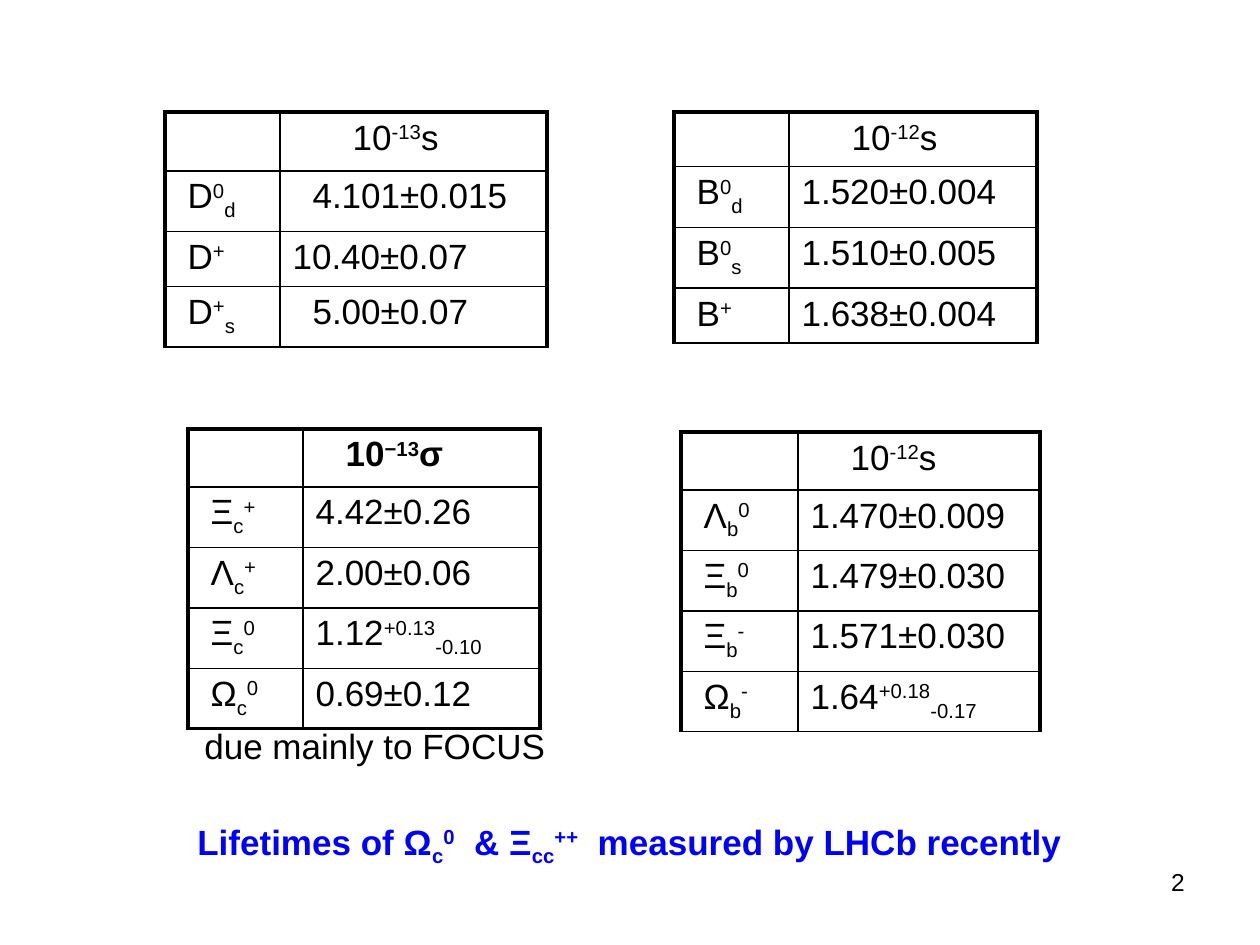
from lxml.etree import SubElement
from pptx import Presentation
from pptx.dml.color import RGBColor
from pptx.enum.text import MSO_ANCHOR, PP_ALIGN
from pptx.oxml.ns import qn
from pptx.util import Emu, Pt

COLORS = {"ink": "000000", "accent": "0000FF"}
FONT = "Arial"
SPACE = 10  # width of one indent step in px
THICK, THIN = 2.25, 1
BASELINES = {"^": "30000", "_": "-25000"}

# Each row: particle, indent steps of its value, value.
# Runs are split by "|"; "^" starts a superscript and "_" a subscript.
CHARMED_MESONS = [
    ("", 6, "10|^-13|s"),
    ("D|^0|_d", 2, "4.101±0.015"),
    ("D|^+", 0, "10.40±0.07"),
    ("D|^+|_s", 2, "5.00±0.07"),
]
BEAUTY_MESONS = [
    ("", 5, "10|^-12|s"),
    ("B|^0|_d", 0, "1.520±0.004"),
    ("B|^0|_s", 0, "1.510±0.005"),
    ("B|^+", 0, "1.638±0.004"),
]
CHARMED_BARYONS = [
    ("", 3, "10|^−13|σ"),
    ("Ξ|_c|^+", 0, "4.42±0.26"),
    ("Λ|_c|^+", 0, "2.00±0.06"),
    ("Ξ|_c|^0", 0, "1.12|^+0.13|_-0.10"),
    ("Ω|_c|^0", 0, "0.69±0.12"),
]
BEAUTY_BARYONS = [
    ("", 4, "10|^-12|s"),
    ("Λ|_b|^0", 0, "1.470±0.009"),
    ("Ξ|_b|^0", 0, "1.479±0.030"),
    ("Ξ|_b|^-", 0, "1.571±0.030"),
    ("Ω|_b|^-", 0, "1.64|^+0.18|_-0.17"),
]


def px(length):
    return Emu(round(length * 914400 / 126))


def add_runs(paragraph, markup, size=20, color="ink", bold=False):
    for part in markup.split("|"):
        baseline = BASELINES.get(part[:1])
        run = paragraph.add_run()
        run.text = part[1:] if baseline else part
        font = run.font
        font.name, font.size, font.bold = FONT, Pt(size), bold
        font.color.rgb = RGBColor.from_string(COLORS[color])
        if baseline:
            font._element.set("baseline", baseline)


def set_borders(cell, **widths):
    properties = cell._tc.get_or_add_tcPr()
    for side, width in widths.items():
        line = SubElement(properties, qn(f"a:ln{side}"), w=str(Pt(width)))
        fill = SubElement(line, qn("a:solidFill"))
        SubElement(fill, qn("a:srgbClr"), val=COLORS["ink"])


def fill_cell(cell, markup, indent, bold):
    cell.margin_left = cell.margin_right = Pt(7.2)
    cell.margin_top = cell.margin_bottom = Pt(3.6)
    cell.vertical_anchor = MSO_ANCHOR.TOP
    cell.fill.background()
    if markup:
        paragraph = cell.text_frame.paragraphs[0]
        paragraph.space_before = Pt(0.8)
        if indent:
            paragraph._p.get_or_add_pPr().set("marL", str(px(indent * SPACE)))
        add_runs(paragraph, markup, bold=bold)


def add_lifetimes(slide, left, top, widths, heights, rows, bottom=THIN, bold_unit=False):
    table = slide.shapes.add_table(
        len(rows), 2, px(left), px(top), px(sum(widths)), px(sum(heights))
    ).table
    table.first_row = table.horz_banding = False
    for column, width in zip(table.columns, widths):
        column.width = px(width)
    last = len(rows) - 1
    for i, (particle, indent, value) in enumerate(rows):
        table.rows[i].height = px(heights[i])
        for j, (markup, steps) in enumerate([(particle, 1), (value, indent)]):
            cell = table.cell(i, j)
            set_borders(
                cell,
                L=THIN if j else THICK,
                R=THICK if j else THIN,
                T=THIN if i else THICK,
                B=bottom if i == last else THIN,
            )
            fill_cell(cell, markup, steps, bold_unit and i == 0)


def add_text(slide, left, top, width, height, markup, align=PP_ALIGN.LEFT, before=0, **style):
    frame = slide.shapes.add_textbox(px(left), px(top), px(width), px(height)).text_frame
    frame.word_wrap = True
    paragraph = frame.paragraphs[0]
    paragraph.alignment = align
    paragraph.space_before = Pt(before)
    add_runs(paragraph, markup, **style)


def main():
    deck = Presentation()
    deck.slide_width, deck.slide_height = px(1260), px(945)
    slide = deck.slides.add_slide(deck.slide_layouts[6])

    # Page number
    add_text(slide, 903, 861, 294, 66, "2", align=PP_ALIGN.RIGHT, size=14)

    # Baryon lifetimes
    add_lifetimes(slide, 188, 429, (115, 237), (58, 60, 60, 60, 60), CHARMED_BARYONS,
                  bottom=THICK, bold_unit=True)
    add_lifetimes(slide, 681, 432, (117, 242), (58, 60, 60, 60, 60), BEAUTY_BARYONS)

    # Meson lifetimes
    add_lifetimes(slide, 165, 112, (115, 267), (59, 60, 55, 60), CHARMED_MESONS)
    add_lifetimes(slide, 674, 112, (115, 248), (54, 61, 60, 55), BEAUTY_MESONS)

    # Remarks
    add_text(slide, 192, 718, 393, 55, "due mainly to FOCUS", before=2)
    add_text(slide, 185, 814, 914, 55,
             "Lifetimes of Ω|_c|^0|  & Ξ|_cc|^++|  measured by LHCb recently",
             color="accent", bold=True)

    deck.save("out.pptx")


if __name__ == "__main__":
    main()
